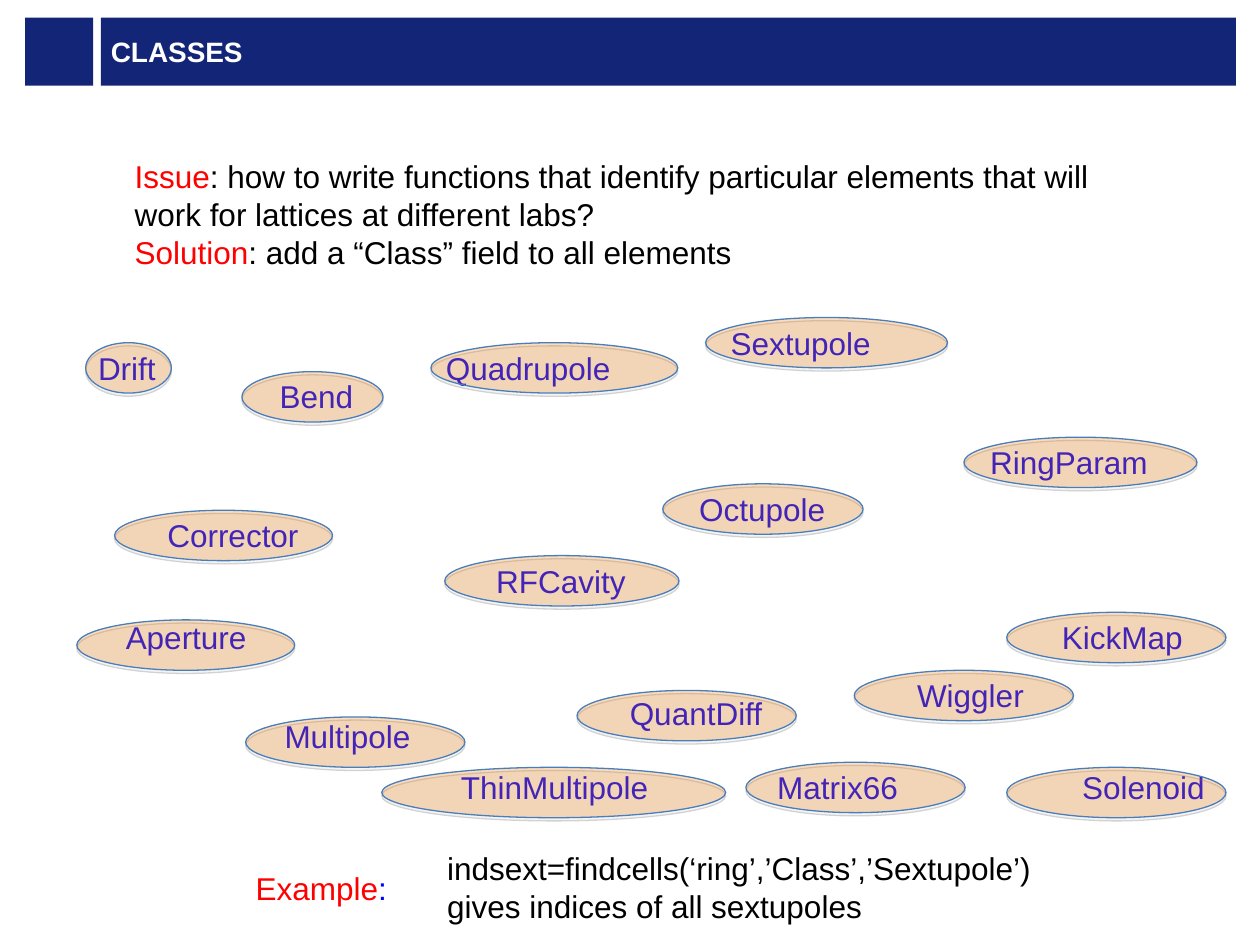
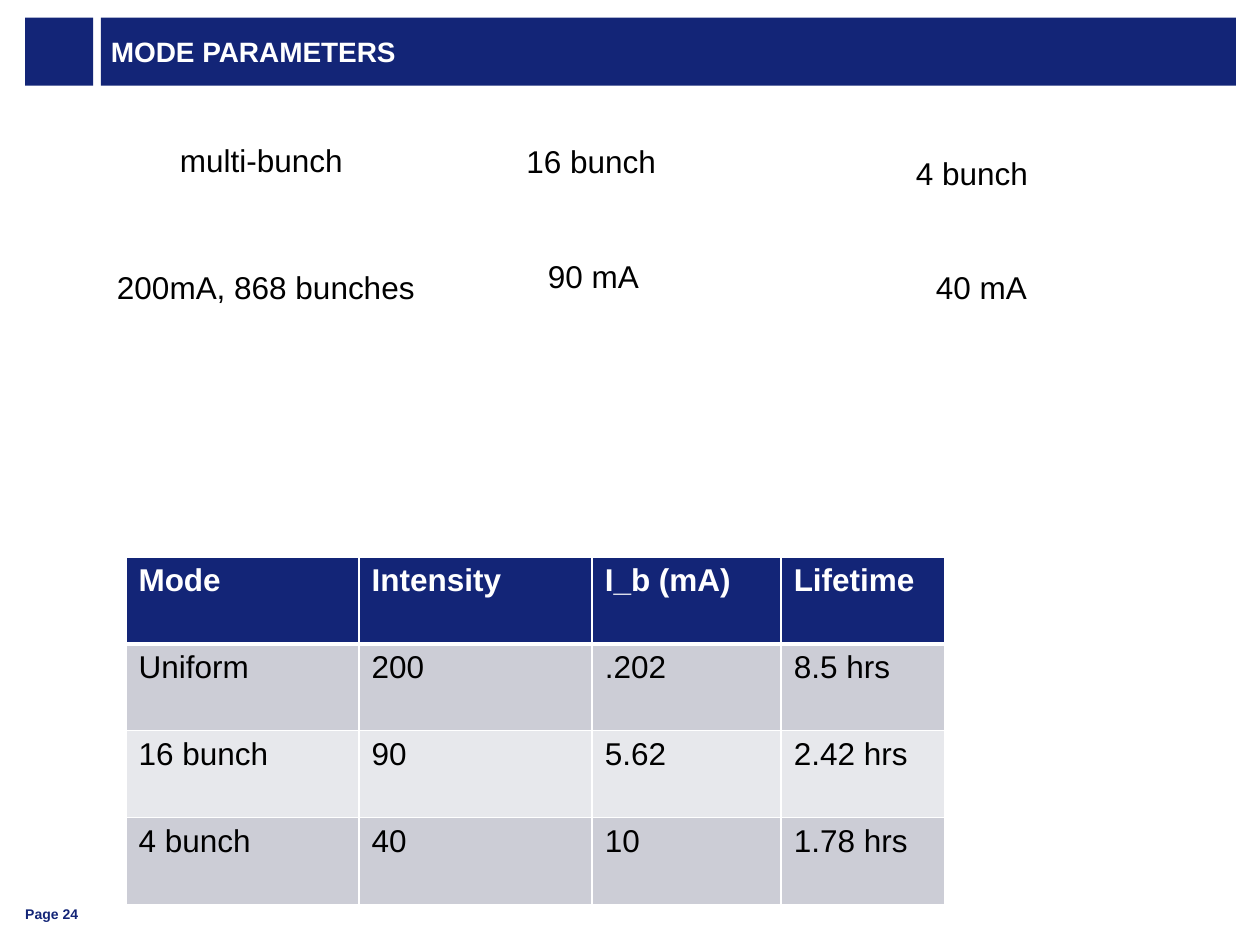
from dataclasses import dataclass

from lxml import etree
from pptx import Presentation
from pptx import util as u
from pptx.dml.color import RGBColor
from pptx.enum import shapes, text
from pptx.oxml import ns, parse_xml

SCALE = 9144  # EMU per px, 100 px to the inch


@dataclass(frozen=True)
class Theme:
    font: str = "Arial"
    navy: str = "132577"
    white: str = "FFFFFF"
    black: str = "000000"
    red: str = "FF0000"
    blue: str = "0000FF"
    orange: str = "ED7703"
    outline: str = "4A7EBB"
    shadow: str = "808080"
    bands: tuple = ("CCCDD6", "E7E8EC")
    title_size: int = 16
    body_size: int = 18
    footer_size: int = 8


THEME = Theme()
LINE_HEIGHT = 40
BAND_TOP, BAND_HEIGHT = 14, 54

# Class name: label (left, top, width), ellipse (left, top, width)
ELEMENT_CLASSES = {
    "RingParam": ((776, 347, 147), (765, 347, 185)),
    "Drift": ((68, 272, 66), (68, 272, 68)),
    "Bend": ((212, 294, 79), (192, 295, 112)),
    "Quadrupole": ((344, 272, 152), (342, 272, 196)),
    "Sextupole": ((570, 252, 132), (560, 252, 192)),
    "Octupole": ((545, 384, 121), (526, 384, 159)),
    "RFCavity": ((384, 441, 124), (353, 441, 186)),
    "Corrector": ((123, 405, 126), (91, 405, 173)),
    "Multipole": ((216, 564, 121), (195, 569, 174)),
    "ThinMultipole": ((356, 605, 170), (303, 609, 273)),
    "QuantDiff": ((490, 546, 128), (458, 548, 174)),
    "Matrix66": ((607, 605, 117), (592, 605, 174)),
    "Wiggler": ((718, 532, 106), (678, 532, 174)),
    "KickMap": ((833, 486, 117), (799, 486, 174)),
    "Solenoid": ((849, 605, 118), (799, 609, 174)),
    "Aperture": ((90, 486, 117), (61, 492, 173)),
}

MODE_LABELS = [
    ("multi-bunch", 133, 107, 151),
    ("16 bunch", 408, 108, 124),
    ("4 bunch", 717, 117, 110),
    ("200mA, 868 bunches", 83, 208, 259),
    ("90 mA", 425, 199, 93),
    ("40 mA", 733, 208, 93),
]

MODE_ROWS = [
    ("Mode", "Intensity", "I_b (mA)", "Lifetime"),
    ("Uniform", "200", ".202", "8.5 hrs"),
    ("16 bunch", "90", "5.62", "2.42 hrs"),
    ("4 bunch", "40", "10", "1.78 hrs"),
]


def px(*lengths):
    return [u.Emu(length * SCALE) for length in lengths]


def paint(fill, color):
    fill.solid()
    fill.fore_color.rgb = RGBColor.from_string(color)


def add_span(para, words, color=THEME.black, size=THEME.body_size, bold=False):
    span = para.add_run()
    span.text = words
    span.font.name = THEME.font
    span.font.size = u.Pt(size)
    span.font.bold = bold
    span.font.color.rgb = RGBColor.from_string(color)


def set_insets(frame, side):
    frame.margin_left = frame.margin_right = px(side)[0]
    frame.margin_top = frame.margin_bottom = 0


def add_label(page, left, top, width, *lines, height=LINE_HEIGHT):
    """Add an unwrapped text box; each line is a list of (words, color)."""
    box = page.shapes.add_textbox(*px(left, top, width, height))
    frame = box.text_frame
    frame.word_wrap = False
    frame.auto_size = text.MSO_AUTO_SIZE.SHAPE_TO_FIT_TEXT
    for index, line in enumerate(lines):
        para = frame.add_paragraph() if index else frame.paragraphs[0]
        for words, color in line:
            add_span(para, words, color)


def add_ellipse(page, left, top, width):
    """Add a translucent ellipse with a soft shadow straight below it."""
    ellipse = page.shapes.add_shape(
        shapes.MSO_SHAPE.OVAL, *px(left, top, width, LINE_HEIGHT))
    paint(ellipse.fill, THEME.orange)
    ellipse.line.color.rgb = RGBColor.from_string(THEME.outline)
    ellipse.line.width = u.Pt(0.75)
    properties = ellipse.element.spPr
    tint = properties.find(ns.qn("a:solidFill"))[0]
    etree.SubElement(tint, ns.qn("a:alpha"), val="25000")
    properties.append(parse_xml(
        f'<a:effectLst {ns.nsdecls("a")}>'
        f'<a:outerShdw dist="{u.Pt(1.8)}" dir="5400000" rotWithShape="0">'
        f'<a:srgbClr val="{THEME.shadow}"><a:alpha val="35000"/></a:srgbClr>'
        '</a:outerShdw></a:effectLst>'))


def add_corner_square(layout, page):
    """Draw the navy square and hand it to the layout, for all pages."""
    square = page.shapes.add_shape(
        shapes.MSO_SHAPE.RECTANGLE, *px(20, BAND_TOP, BAND_HEIGHT, BAND_HEIGHT))
    square.shadow.inherit = False
    paint(square.fill, THEME.navy)
    square.line.fill.background()
    layout.shapes.element.append(square.element)


def add_page(deck, layout, heading):
    page = deck.slides.add_slide(layout)
    title = page.shapes.title
    title.left, title.top, title.width, title.height = px(
        80, BAND_TOP, 901, BAND_HEIGHT)
    paint(title.fill, THEME.navy)
    frame = title.text_frame
    set_insets(frame, 8)
    frame.vertical_anchor = text.MSO_ANCHOR.MIDDLE
    para = frame.paragraphs[0]
    para.alignment = text.PP_ALIGN.LEFT
    add_span(para, heading, THEME.white, THEME.title_size, bold=True)
    return page


def add_page_number(page, number):
    box = page.shapes.add_textbox(*px(20, 709, 45, 23))
    frame = box.text_frame
    frame.word_wrap = False
    set_insets(frame, 0)
    frame.vertical_anchor = text.MSO_ANCHOR.BOTTOM
    add_span(frame.paragraphs[0], f"Page {number}", THEME.navy,
             THEME.footer_size, bold=True)


def set_borders(cell, **widths):
    """Draw white borders; the keys are L, R, T and B, the widths points."""
    properties = cell._tc.get_or_add_tcPr()
    for side, width in widths.items():
        properties.append(parse_xml(
            f'<a:ln{side} {ns.nsdecls("a")} w="{u.Pt(width)}"><a:solidFill>'
            f'<a:srgbClr val="{THEME.white}"/></a:solidFill></a:ln{side}>'))


def add_mode_table(page, left, top, widths, row_height):
    size = px(left, top, sum(widths), row_height * len(MODE_ROWS))
    table = page.shapes.add_table(len(MODE_ROWS), len(widths), *size).table
    for column, width in zip(table.columns, px(*widths)):
        column.width = width
    for row, values in enumerate(MODE_ROWS):
        table.rows[row].height = px(row_height)[0]
        header = row == 0
        for column, value in enumerate(values):
            cell = table.cell(row, column)
            set_borders(cell, L=1, R=1, T=3 if row == 1 else 1,
                        B=3 if header else 1)
            paint(cell.fill, THEME.navy if header else THEME.bands[(row - 1) % 2])
            add_span(cell.text_frame.paragraphs[0], value,
                     THEME.white if header else THEME.black, bold=header)


def build_classes(page):
    for name, (label, ellipse) in ELEMENT_CLASSES.items():
        add_label(page, *label, [(name, THEME.blue)])
        add_ellipse(page, *ellipse)
    add_label(
        page, 345, 669, 488,
        [("indsext=findcells(‘ring’,’Class’,’Sextupole’)", THEME.black)],
        [("gives indices of all sextupoles", THEME.black)], height=71)
    add_label(
        page, 97, 120, 786,
        [("Issue", THEME.red),
         (": how to write functions that identify particular elements that will",
          THEME.black)],
        [("work for lattices at different labs?", THEME.black)],
        [("Solution", THEME.red),
         (": add a “Class” field to all elements", THEME.black)], height=101)
    add_label(page, 193, 685, 125, [("Example", THEME.red), (":", THEME.blue)])


def build_modes(page):
    add_page_number(page, 24)
    for words, left, top, width in MODE_LABELS:
        add_label(page, left, top, width, [(words, THEME.black)])
    add_mode_table(page, 100, 442, (185, 185, 150, 130), 69)


def main():
    deck = Presentation()
    deck.slide_width, deck.slide_height = px(1000, 750)
    layout = deck.slide_layouts.get_by_name("Title Only")
    classes = add_page(deck, layout, "CLASSES")
    add_corner_square(layout, classes)
    build_classes(classes)
    build_modes(add_page(deck, layout, "MODE PARAMETERS"))
    deck.save("out.pptx")


if __name__ == "__main__":
    main()
